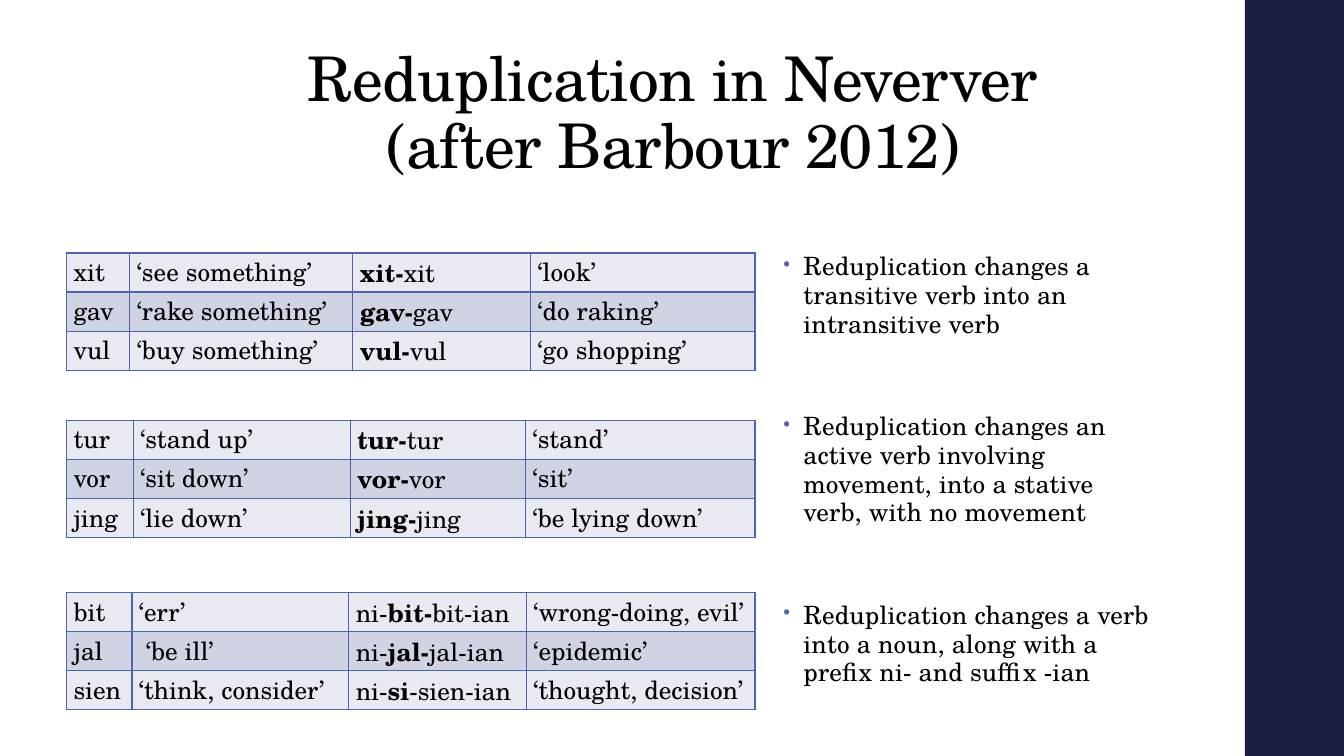
import dataclasses

import lxml.etree
import pptx
import pptx.dml.color
import pptx.enum.shapes
import pptx.enum.text
import pptx.oxml.ns
import pptx.util


@dataclasses.dataclass(frozen=True)
class Theme:
    font: str = "TeX Gyre Schola"
    ink: str = "000000"
    band: str = "1B1E3E"
    accent: str = "4A66AC"
    stripes: tuple = ("E9EAF1", "D0D3E3")
    title_size: int = 44
    text_size: int = 18


THEME = Theme()
WIDTH, HEIGHT = pptx.util.Inches(13.33), pptx.util.Inches(7.5)

TABLES = [
    (33.47, (9.2, 32.4, 25.8, 32.6), [
        ("xit", "‘see something’", "*xit-*xit", "‘look’"),
        ("gav", "‘rake something’", "*gav-*gav", "‘do raking’"),
        ("vul", "‘buy something’", "*vul-*vul", "‘go shopping’"),
    ]),
    (55.6, (9.7, 31.5, 25.5, 33.3), [
        ("tur", "‘stand up’", "*tur-*tur", "‘stand’"),
        ("vor", "‘sit down’", "*vor-*vor", "‘sit’"),
        ("jing", "‘lie down’", "*jing-*jing", "‘be lying down’"),
    ]),
    (78.4, (9.5, 31.5, 25.8, 33.2), [
        ("bit", "‘err’", "ni-*bit-*bit-ian", "‘wrong-doing, evil’"),
        ("jal", " ‘be ill’", "ni-*jal-*jal-ian", "‘epidemic’"),
        ("sien", "‘think, consider’", "ni-*si*-sien-ian", "‘thought, decision’"),
    ]),
]

FINDINGS = [
    "Reduplication changes a transitive verb into an intransitive verb",
    "Reduplication changes an active verb involving movement, into a stative verb, with no movement",
    "Reduplication changes a verb into a noun, along with a prefix ni- and suffix -ian",
]


def grid(left, top, width, height):
    column, row = WIDTH / 100, HEIGHT / 100
    return [round(size) for size in (left * column, top * row, width * column, height * row)]


def color(value):
    return pptx.dml.color.RGBColor.from_string(value)


def add_xml(parent, tag, **attributes):
    return lxml.etree.SubElement(parent, pptx.oxml.ns.qn(tag), **attributes)


def style(para, size, tracking=0):
    para.font.name = THEME.font
    para.font.size = pptx.util.Pt(size)
    para.font.color.rgb = color(THEME.ink)
    if tracking:
        para.font._rPr.set("spc", str(tracking))


def add_band(page, box):
    band = page.shapes.add_shape(pptx.enum.shapes.MSO_SHAPE.RECTANGLE, *box)
    band.shadow.inherit = False
    band.fill.solid()
    band.fill.fore_color.rgb = color(THEME.band)
    band.line.fill.background()


def set_title(page, box, text):
    title = page.shapes.title
    title.left, title.top, title.width, title.height = box
    frame = title.text_frame
    frame.text = text
    frame.auto_size = pptx.enum.text.MSO_AUTO_SIZE.NONE
    frame.vertical_anchor = pptx.enum.text.MSO_ANCHOR.BOTTOM
    para = frame.paragraphs[0]
    para.alignment = pptx.enum.text.PP_ALIGN.CENTER
    para.line_spacing = 0.9
    style(para, THEME.title_size, -50)


def add_borders(cell):
    properties = cell._tc.get_or_add_tcPr()
    for position, side in enumerate(("a:lnL", "a:lnR", "a:lnT", "a:lnB")):
        line = add_xml(properties, side, w=str(pptx.util.Pt(1)))
        add_xml(add_xml(line, "a:solidFill"), "a:srgbClr", val=THEME.accent)
        properties.insert(position, line)


def fill_cell(cell, text, stripe):
    cell.fill.solid()
    cell.fill.fore_color.rgb = color(stripe)
    cell.margin_left = cell.margin_right = pptx.util.Inches(0.07)
    cell.margin_top = cell.margin_bottom = 0
    add_borders(cell)
    para = cell.text_frame.paragraphs[0]
    style(para, THEME.text_size)
    for index, part in enumerate(text.split("*")):
        if part:
            span = para.add_run()
            span.text = part
            if index % 2:
                span.font.bold = True


def add_examples(page, box, shares, rows):
    table = page.shapes.add_table(len(rows), len(shares), *box).table
    table.first_row = table.horz_banding = False
    for column, share in zip(table.columns, shares):
        column.width = round(box[2] * share / 100)
    for index, words in enumerate(rows):
        table.rows[index].height = round(box[3] / len(rows))
        for cell, text in zip(table.rows[index].cells, words):
            fill_cell(cell, text, THEME.stripes[index % 2])


def add_bullet(para):
    properties = para._p.get_or_add_pPr()
    indent = pptx.util.Inches(0.2)
    properties.set("marL", str(indent))
    properties.set("indent", str(-indent))
    add_xml(add_xml(properties, "a:buClr"), "a:srgbClr", val=THEME.accent)
    add_xml(properties, "a:buSzPct", val="80000")
    add_xml(properties, "a:buChar", char="•")


def add_findings(page, box, findings):
    frame = page.shapes.add_textbox(*box).text_frame
    frame.word_wrap = True
    for index, text in enumerate(findings):
        para = frame.add_paragraph() if index else frame.paragraphs[0]
        para.text = text
        para.line_spacing = 0.95
        para.space_after = pptx.util.Pt(52.6)
        add_bullet(para)
        style(para, THEME.text_size, 10)


def build_page(deck):
    page = deck.slides.add_slide(deck.slide_layouts.get_by_name("Title Only"))
    add_band(page, grid(92.63, 0, 7.37, 100))
    set_title(page, grid(10.35, 5.33, 79.5, 19.33), "Reduplication in Neverver\v(after Barbour 2012)")
    for top, shares, rows in TABLES:
        add_examples(page, grid(4.95, top, 51.23, 15.5), shares, rows)
    add_findings(page, grid(57.54, 32.8, 29.1, 59.6), FINDINGS)


def main():
    deck = pptx.Presentation()
    deck.slide_width, deck.slide_height = WIDTH, HEIGHT
    build_page(deck)
    deck.save("out.pptx")


if __name__ == "__main__":
    main()
